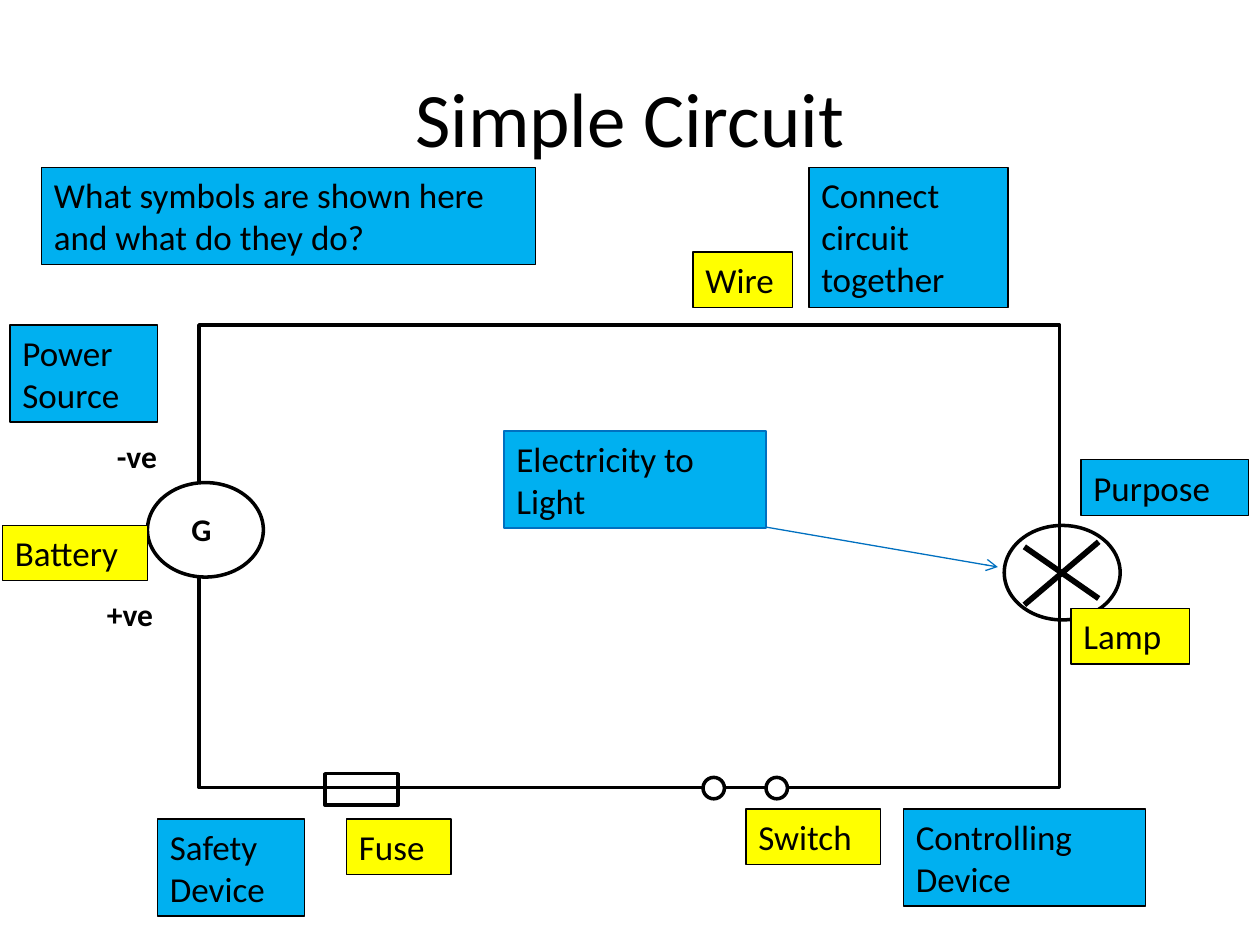
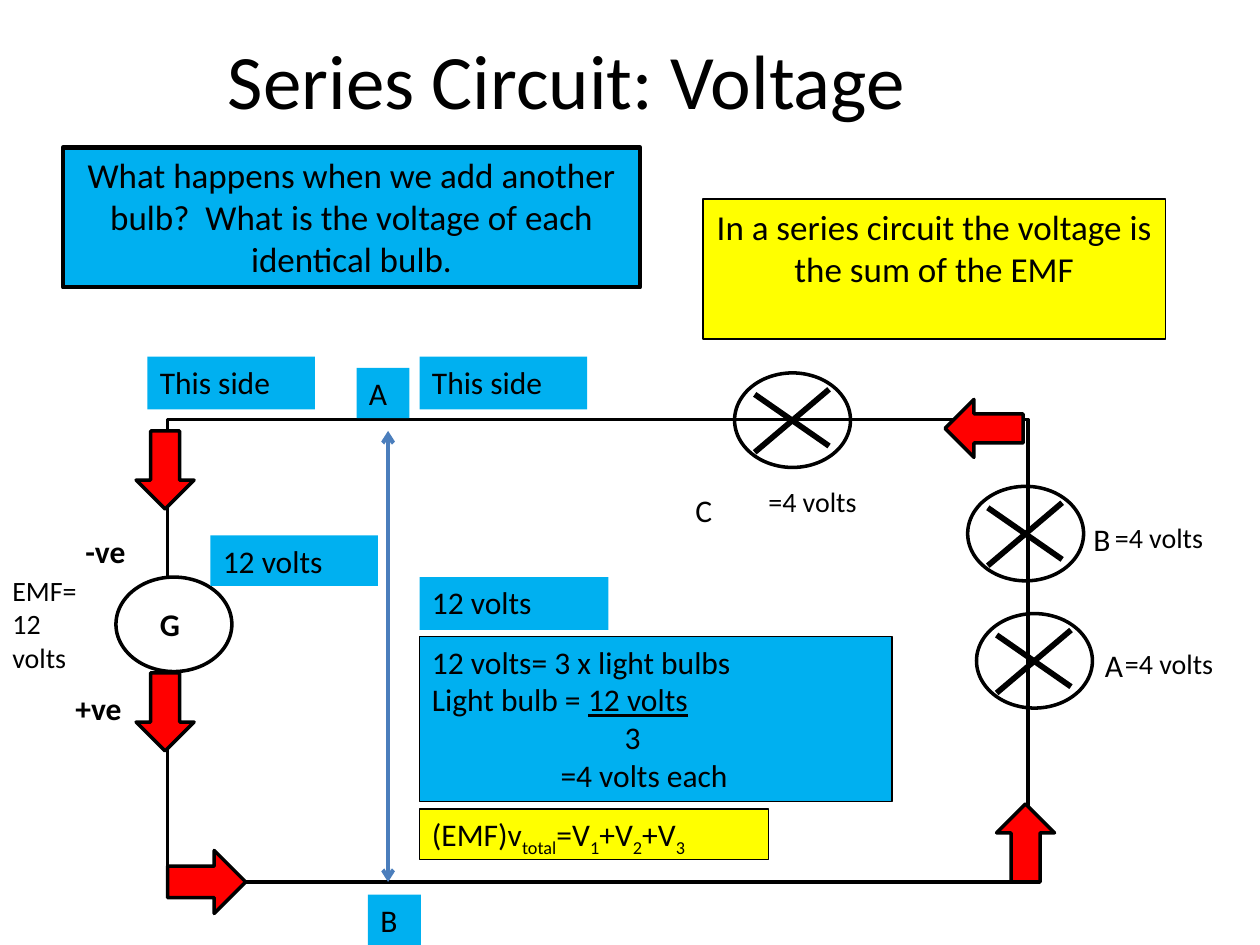
from lxml import etree
from pptx import Presentation
from pptx.dml.color import RGBColor
from pptx.enum.shapes import MSO_CONNECTOR, MSO_SHAPE
from pptx.enum.text import MSO_ANCHOR, PP_ALIGN
from pptx.oxml.ns import qn
from pptx.util import Inches, Pt

RECT, OVAL, ARROW = MSO_SHAPE.RECTANGLE, MSO_SHAPE.OVAL, MSO_SHAPE.RIGHT_ARROW
STRAIGHT = MSO_CONNECTOR.STRAIGHT
LEFT, CENTER = PP_ALIGN.LEFT, PP_ALIGN.CENTER
TOP, MIDDLE = MSO_ANCHOR.TOP, MSO_ANCHOR.MIDDLE

FONT = "Calibri"
BLACK, WHITE, RED = "000000", "FFFFFF", "FF0000"
YELLOW, CYAN, BLUE, STEEL = "FFFF00", "00B0F0", "0070C0", "4B7EBC"
WIRE_SIZE = (6.83, 3.67)
SYMBOL_SIZE = (0.92, 0.75)
CROSS_STROKES = [((0.16, 0.63), (0.75, 0.13)), ((0.75, 0.58), (0.16, 0.17))]
GENERATOR_TEXT = [("G", 0.25, 0.17, 0.42), ("-ve", -0.34, -0.41, 0.75),
                  ("+ve", -0.42, 0.84, 0.75)]

# Simple circuit: (text, box)
SIMPLE_LAMP = (7.97, 4.17)
FUSE = (2.58, 6.14, 0.58, 0.25)
SWITCH_CONTACTS = [5.58, 6.08]
NAMES = [
    ("Wire", (5.5, 2, 0.79, 0.44)),
    ("Lamp", (8.5, 4.83, 0.94, 0.44)),
    ("Switch", (5.92, 6.42, 1.07, 0.44)),
    ("Fuse", (2.75, 6.5, 0.83, 0.44)),
    ("Battery", (0.02, 4.17, 1.15, 0.44)),
]
PURPOSES = [
    ("Power Source", (0.08, 2.58, 1.17, 0.77)),
    ("Safety Device", (1.25, 6.5, 1.17, 0.77)),
    ("Controlling Device", (7.17, 6.42, 1.92, 0.77)),
    ("Purpose", (8.58, 3.65, 1.33, 0.44)),
    ("Connect circuit together", (6.42, 1.33, 1.58, 1.11)),
    ("What symbols are shown here and what do they do?", (0.33, 1.33, 3.92, 0.77)),
]
LAMP_PURPOSE = ("Electricity to Light", (4, 3.42, 2.08, 0.77))

# Series circuit
SERIES_LAMPS = [(5.83, 2.96), (7.68, 3.86), (7.75, 4.87)]
CURRENT_ARROWS = [  # box before rotation, rotation
    ((1, 5.42, 0.62, 0.46), 90),
    ((1.33, 6.75, 0.62, 0.5), 0),
    ((7.83, 6.46, 0.62, 0.46), 270),
    ((7.5, 3.17, 0.62, 0.46), 180),
    ((1, 3.5, 0.62, 0.46), 90),
]
LAMP_LETTERS = [
    ("A", (8.67, 5.08, 0.5, 0.4)),
    ("B", (8.58, 4.08, 0.5, 0.4)),
    ("C", (5.42, 3.85, 0.33, 0.4)),
]
VOLT_NOTES = [
    ("=4 volts", (8.83, 5.08, 1.25, 0.37)),
    ("=4 volts", (8.75, 4.08, 1.25, 0.37)),
    ("=4 volts", (6, 3.8, 1.25, 0.37)),
    ("EMF= 12 volts", (0, 4.5, 0.75, 0.91)),
]
SIDE_TAGS = [
    ("A", (2.83, 2.92, 0.42, 0.4)),
    ("B", (2.92, 7.1, 0.42, 0.4)),
    ("12 volts", (1.67, 4.25, 1.33, 0.4)),
    ("12 volts", (3.33, 4.58, 1.5, 0.42)),
    ("This side", (1.17, 2.83, 1.33, 0.42)),
    ("This side", (3.33, 2.83, 1.33, 0.42)),
]
RULE = ("In a series circuit the voltage is the sum of the EMF",
        (5.58, 1.58, 3.67, 1.11))
QUESTION = ("What happens when we add another bulb?  What is the voltage of each "
            "identical bulb.", (0.5, 1.17, 4.58, 1.11))
WORKING_BOX = (3.33, 5.05, 3.75, 1.31)
WORKING = [  # left indent, runs of (text, style)
    (0, [("12 volts= 3 x light bulbs", "")]),
    (0, [("Light bulb = ", ""), ("12 volts", "underline")]),
    (1.53, [("3", "")]),
    (1.02, [("=4 volts each", "")]),
]
FORMULA_BOX = (3.33, 6.42, 2.77, 0.4)
FORMULA = [(0, [("(EMF)v", ""), ("total", "sub"), ("=V", ""), ("1", "sub"),
                ("+V", ""), ("2", "sub"), ("+V", ""), ("3", "sub")])]


def rgb(color):
    return RGBColor.from_string(color)


def write(sp, paragraphs, size, bold=False, align=LEFT, anchor=TOP):
    """Fill a shape with text: a string, or a list of (indent, runs)."""
    if isinstance(paragraphs, str):
        paragraphs = [(0, [(paragraphs, "")])]
    tf = sp.text_frame
    tf.word_wrap = True
    tf.vertical_anchor = anchor
    for i, (indent, runs) in enumerate(paragraphs):
        p = tf.add_paragraph() if i else tf.paragraphs[0]
        p.alignment = align
        if indent:
            p._p.get_or_add_pPr().set("marL", str(Inches(indent)))
        for text, style in runs:
            r = p.add_run()
            r.text = text
            r.font.name = FONT
            r.font.size = Pt(size)
            r.font.bold = bold
            r.font.color.rgb = rgb(BLACK)
            if style == "underline":
                r.font.underline = True
            elif style == "sub":
                r.font._element.set("baseline", "-25000")


def add_text(s, text, box, size, **style):
    write(s.shapes.add_textbox(*map(Inches, box)), text, size, **style)


def add_shape(s, kind, box, fill=None, line=BLACK, width=2.0):
    sp = s.shapes.add_shape(kind, *map(Inches, box))
    sp.shadow.inherit = False
    if fill:
        sp.fill.solid()
        sp.fill.fore_color.rgb = rgb(fill)
    else:
        sp.fill.background()
    if line:
        sp.line.color.rgb = rgb(line)
        sp.line.width = Pt(width)
    else:
        sp.line.fill.background()
    return sp


def add_label(s, text, box, fill, size=20, line=BLACK, width=0.75, align=LEFT):
    write(add_shape(s, RECT, box, fill, line, width), text, size, align=align)


def add_line(s, start, end, color, width, heads=()):
    """Draw a line; heads may hold headEnd and tailEnd."""
    c = s.shapes.add_connector(STRAIGHT, *map(Inches, (*start, *end)))
    c.line.color.rgb = rgb(color)
    c.line.width = Pt(width)
    for head in heads:
        etree.SubElement(c.line._get_or_add_ln(), qn("a:" + head), type="arrow")
    etree.SubElement(c._element.spPr, qn("a:effectLst"))


def add_circuit(s, wire, generator, lamps):
    """Draw the lamps, the wire loop over them, the generator and the lamp crosses."""
    for lamp in lamps:
        add_shape(s, OVAL, lamp + SYMBOL_SIZE, WHITE)
    add_shape(s, RECT, wire + WIRE_SIZE)
    x, y = generator
    add_shape(s, OVAL, generator + SYMBOL_SIZE, WHITE)
    for text, dx, dy, w in GENERATOR_TEXT:
        add_text(s, text, (x + dx, y + dy, w, 0.4), 18, bold=True)
    for x, y in lamps:
        for (x1, y1), (x2, y2) in CROSS_STROKES:
            add_line(s, (x + x1, y + y1), (x + x2, y + y2), BLACK, 3.25)


def add_slide(prs, title, box):
    s = prs.slides.add_slide(prs.slide_layouts[6])
    add_text(s, title, box, 44, align=CENTER, anchor=MIDDLE)
    return s


def build_simple_circuit(prs):
    s = add_slide(prs, "Simple Circuit", (0.5, 0.3, 9, 1.25))
    add_circuit(s, (1.58, 2.58), (1.17, 3.83), [SIMPLE_LAMP])
    add_shape(s, RECT, FUSE)
    for x in SWITCH_CONTACTS:
        add_shape(s, OVAL, (x, 6.17, 0.17, 0.17), WHITE)
    for text, box in NAMES:
        add_label(s, text, box, YELLOW)
    for text, box in PURPOSES:
        add_label(s, text, box, CYAN)
    add_line(s, (6, 4.17), (7.92, 4.5), BLUE, 0.75, ["tailEnd"])
    add_label(s, *LAMP_PURPOSE, CYAN, line=BLUE, width=1.5)


def build_series_circuit(prs):
    s = add_slide(prs, "Series Circuit: Voltage", (0, 0, 9, 1.25))
    add_circuit(s, (1.33, 3.33), (0.92, 4.58), SERIES_LAMPS)
    for box, rotation in CURRENT_ARROWS:
        add_shape(s, ARROW, box, RED).rotation = rotation
    for text, box in LAMP_LETTERS:
        add_text(s, text, box, 18)
    for text, box in VOLT_NOTES:
        add_text(s, text, box, 16)
    add_label(s, *RULE, YELLOW, align=CENTER)
    add_label(s, *QUESTION, CYAN, width=2.5, align=CENTER)
    add_line(s, (3.08, 3.42), (3.08, 7), STEEL, 2.25, ["headEnd", "tailEnd"])
    for text, box in SIDE_TAGS:
        add_label(s, text, box, CYAN, size=18, line=None)
    add_label(s, WORKING, WORKING_BOX, CYAN, size=18)
    add_label(s, FORMULA, FORMULA_BOX, YELLOW, size=18)


def main():
    prs = Presentation()
    prs.slide_width, prs.slide_height = Inches(10), Inches(7.5)
    build_simple_circuit(prs)
    build_series_circuit(prs)
    prs.save("out.pptx")


if __name__ == "__main__":
    main()
